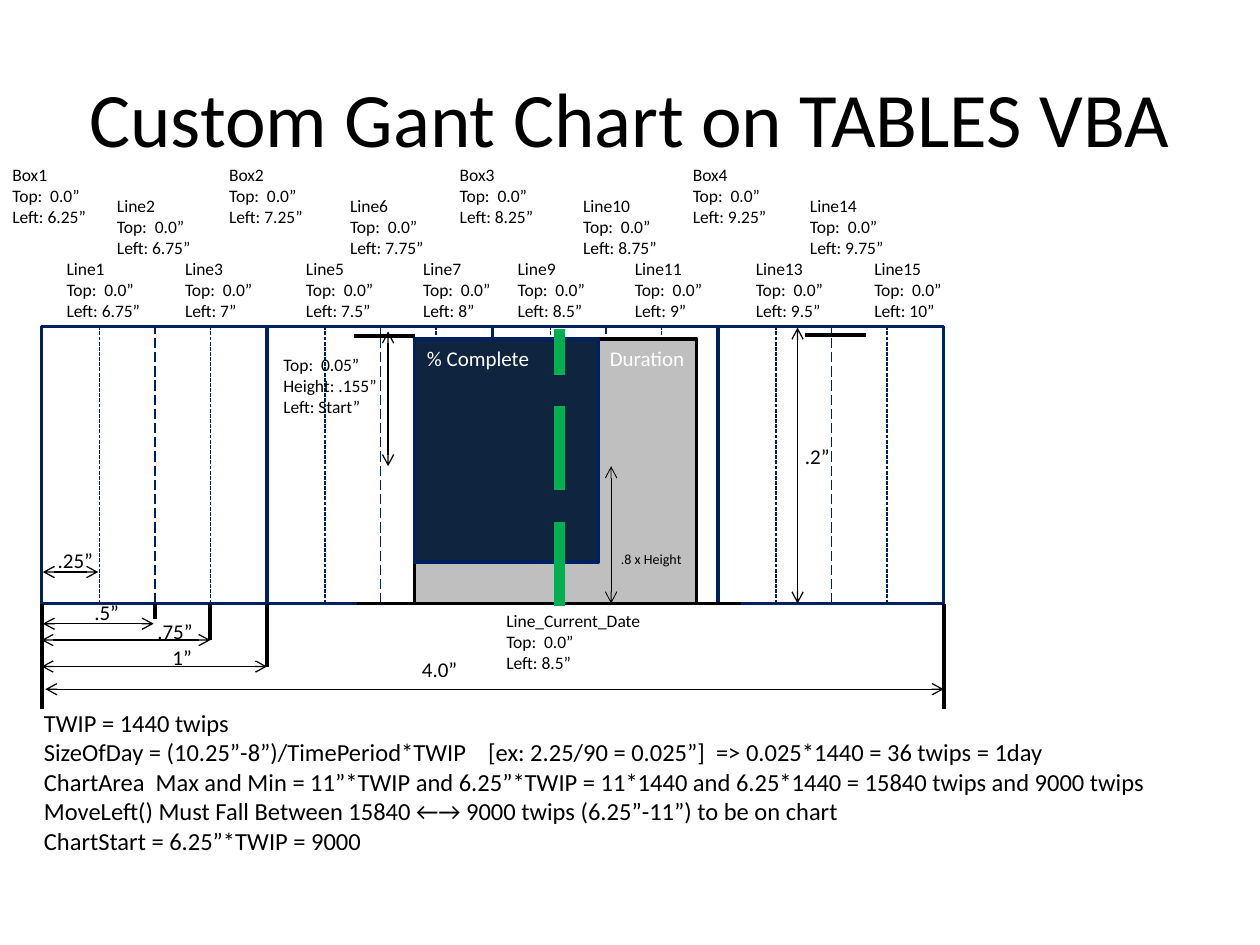
from dataclasses import dataclass

from lxml import etree
from pptx import Presentation
from pptx.dml.color import RGBColor
from pptx.enum import dml, shapes, text
from pptx.oxml.ns import qn
from pptx.util import Inches, Pt


@dataclass(frozen=True)
class Theme:
    font: str = "Calibri"
    black: str = "000000"
    white: str = "FFFFFF"
    navy: str = "002060"
    dark: str = "0F243E"
    gray: str = "BFBFBF"
    green: str = "00B050"
    title: int = 44
    body: int = 14
    mark: int = 12
    label: int = 10
    small: int = 8
    thin: float = 0.75
    edge: float = 2
    thick: float = 2.25


T = Theme()
LONG = dml.MSO_LINE.LONG_DASH
SHORT = dml.MSO_LINE.SQUARE_DOT
SYS = "sysDash"
LEFT, TOP, BASE = 0.33, 2.59, 4.79
WIDTH = 1.79
QUARTERS = [(0.46, SYS), (0.9, LONG), (1.34, SYS)]

# Rows of labels: top, then (name, left value, x)
ROWS = [
    (1.25, [("Box1", "6.25", 0), ("Box2", "7.25", 1.72),
            ("Box3", "8.25", 3.55), ("Box4", "9.25", 5.4)]),
    (1.5, [("Line2", "6.75", 0.83), ("Line6", "7.75", 2.68),
           ("Line10", "8.75", 4.53), ("Line14", "9.75", 6.33)]),
    (2, [("Line1", "6.75", 0.43), ("Line3", "7", 1.37),
         ("Line5", "7.5", 2.33), ("Line7", "8", 3.26),
         ("Line9", "8.5", 4.01), ("Line11", "9", 4.94),
         ("Line13", "9.5", 5.9), ("Line15", "10", 6.84)]),
    (BASE, [("Line_Current_Date", "8.5", 3.92)]),
]
# Text, left, top, width, size
MARKS = [
    (".2”", 6.29, 3.47, 0.62, T.mark),
    (".8 x Height", 4.83, 4.32, 0.77, T.small),
    (".25”", 0.36, 4.3, 0.58, T.mark),
    (".5”", 0.65, 4.71, 0.58, T.mark),
    (".75”", 1.15, 4.86, 0.58, T.mark),
    ("1”", 1.27, 5.07, 0.38, T.mark),
    ("4.0”", 3.25, 5.16, 0.58, T.mark),
]
# Start and end points, weight
ARROWS = [
    (6.33, BASE, 6.33, 2.6, T.thin),
    (3.08, 3.7, 3.08, 2.63, T.thin),
    (4.85, BASE, 4.85, 3.7, 0.5),
    (0.34, 4.54, 0.78, 4.54, T.thin),
    (0.34, 4.95, 1.22, 4.95, T.thin),
    (LEFT, 5.08, 1.67, 5.08, T.thin),
    (LEFT, 5.29, 2.12, 5.29, T.thin),
    (0.36, 5.47, 7.49, 5.47, T.thin),
]
TICKS = [
    (2.81, 2.67, 3.29, 2.67),
    (6.39, 2.66, 6.87, 2.66),
    (2.83, BASE, 5.88, BASE),
    (LEFT, BASE, LEFT, 5.63),
    (1.23, BASE, 1.23, 4.91),
    (1.67, BASE, 1.67, 5.08),
    (2.12, BASE, 2.12, 5.29),
    (7.49, BASE, 7.49, 5.63),
]
NOTES = [
    "TWIP = 1440 twips",
    "SizeOfDay = (10.25”-8”)/TimePeriod*TWIP    [ex: 2.25/90 = 0.025”]"
    "  => 0.025*1440 = 36 twips = 1day",
    "ChartArea  Max and Min = 11”*TWIP and 6.25”*TWIP = 11*1440 and "
    "6.25*1440 = 15840 twips and 9000 twips",
    "MoveLeft() Must Fall Between 15840 ←→ 9000 twips (6.25”-11”) "
    "to be on chart",
    "ChartStart = 6.25”*TWIP = 9000",
]


def put(item, **values):
    for name, value in values.items():
        setattr(item, name, value)


def write(frame, lines, size, color=T.black, align=text.PP_ALIGN.LEFT):
    frame.text = "\n".join(lines)
    for para in frame.paragraphs:
        para.alignment = align
        for run in para.runs:
            put(run.font, name=T.font, size=Pt(size))
            run.font.color.rgb = RGBColor.from_string(color)


def add_text(slide, lines, x, y, w, h, size):
    frame = slide.shapes.add_textbox(*map(Inches, (x, y, w, h))).text_frame
    put(frame, word_wrap=True, auto_size=text.MSO_AUTO_SIZE.SHAPE_TO_FIT_TEXT)
    write(frame, lines, size)


def add_box(slide, x, y, w, h, fill, line):
    box = slide.shapes.add_shape(shapes.MSO_SHAPE.RECTANGLE,
                                 *map(Inches, (x, y, w, h)))
    box.shadow.inherit = False
    box.fill.solid()
    box.fill.fore_color.rgb = RGBColor.from_string(fill)
    box.line.color.rgb = RGBColor.from_string(line)
    box.line.width = Pt(T.edge)
    return box


def add_bar(slide, name, align, *look):
    frame = add_box(slide, *look).text_frame
    frame.vertical_anchor = text.MSO_ANCHOR.TOP
    write(frame, [name], T.mark, T.white, align)


def add_line(slide, ends, color, weight, dash=None, arrows=False):
    line = slide.shapes.add_connector(shapes.MSO_CONNECTOR.STRAIGHT,
                                      *map(Inches, ends))
    line.line.color.rgb = RGBColor.from_string(color)
    line.line.width = Pt(weight)
    ln = line.line._get_or_add_ln()
    if dash == SYS:
        etree.SubElement(ln, qn("a:prstDash"), val=SYS)
    elif dash:
        line.line.dash_style = dash
    if arrows:
        for end in ("a:headEnd", "a:tailEnd"):
            etree.SubElement(ln, qn(end), type="arrow")
    etree.SubElement(line._element.spPr, qn("a:effectLst"))


def add_panel(slide, x):
    """Draw one time unit with its three quarter lines."""
    add_box(slide, x, TOP, WIDTH, BASE - TOP, T.white, T.navy)
    for step, dash in QUARTERS:
        add_line(slide, (x + step, BASE, x + step, TOP), T.navy, T.thin, dash)


def add_bars(slide):
    add_bar(slide, "Duration", text.PP_ALIGN.RIGHT,
            3.29, 2.69, 2.24, 2.1, T.gray, T.black)
    add_bar(slide, "% Complete", text.PP_ALIGN.LEFT,
            3.29, 2.69, 1.46, 1.77, T.dark, T.navy)


def add_labels(slide):
    for y, row in ROWS:
        for name, value, x in row:
            lines = [name, "Top:  0.0”", f"Left: {value}”"]
            add_text(slide, lines, x, y, 1.35, 0.61, T.label)
    add_text(slide, ["Top:  0.05”", "Height: .155”", "Left: Start”"],
             2.15, 2.76, 1, 0.61, T.label)
    for mark, x, y, w, size in MARKS:
        add_text(slide, [mark], x, y, w, 0.3 if size == T.mark else 0.24, size)


def main():
    deck = Presentation()
    put(deck, slide_width=Inches(10), slide_height=Inches(7.5))
    slide = deck.slides.add_slide(deck.slide_layouts[5])
    title = slide.shapes.title
    put(title, left=Inches(0.5), top=Inches(0.3),
        width=Inches(9), height=Inches(1.25))
    title.text_frame.vertical_anchor = text.MSO_ANCHOR.MIDDLE
    write(title.text_frame, ["Custom Gant Chart on TABLES VBA"], T.title,
          align=text.PP_ALIGN.CENTER)

    for unit in reversed(range(4)):
        add_panel(slide, LEFT + unit * WIDTH)
    add_line(slide, (3.02, BASE, 3.02, TOP), T.navy, T.thin, LONG)
    add_bars(slide)
    for *ends, weight in ARROWS:
        add_line(slide, ends, T.black, weight, arrows=True)
    for ends in TICKS:
        add_line(slide, ends, T.black, T.thick)
    add_line(slide, (4.44, 4.81, 4.44, 2.61), T.green, 6, LONG)
    add_labels(slide)
    add_text(slide, NOTES, 0.25, 5.57, 9.67, 1.28, T.body)
    deck.save("out.pptx")


if __name__ == "__main__":
    main()
